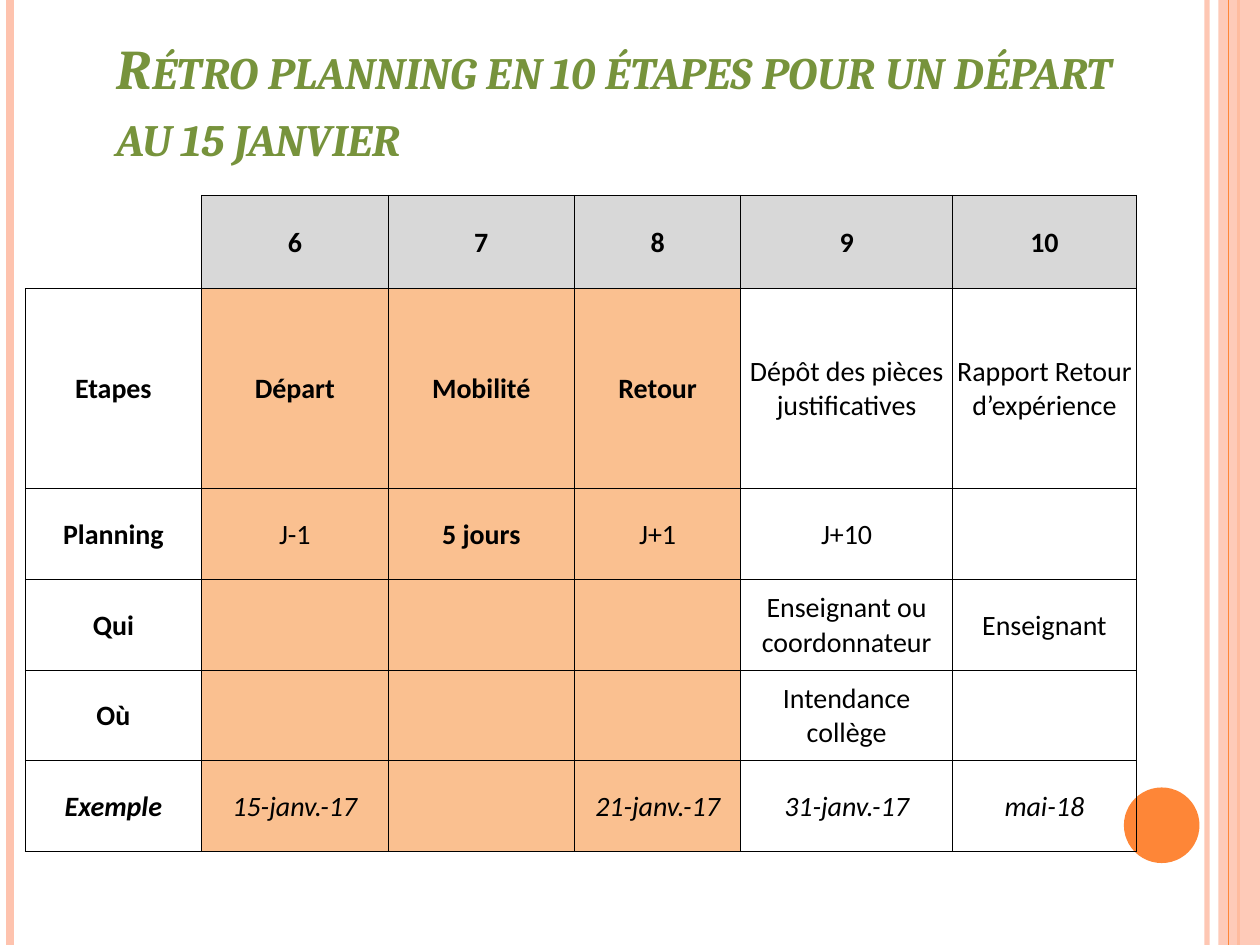
from lxml import etree
from pptx import Presentation
from pptx.dml.color import RGBColor
from pptx.enum import shapes, text
from pptx.oxml.ns import qn
from pptx.util import Inches, Pt

ORANGE, PEACH, APRICOT = "FE8637", "FEC3AE", "FAC090"
GREY, GREEN, BLACK = "D8D8D8", "77933C", "000000"

# x, colour, width in points, opacity in percent
STRIPES_BEHIND = [(9.58, PEACH, 3, 93), (0.08, PEACH, 4.5, 100), (9.83, ORANGE, 1.5, 100)]
STRIPE_IN_FRONT = (9.75, ORANGE, 0.75, 100)

COLUMN_WIDTHS = [1.4, 1.48, 1.48, 1.32, 1.68, 1.46]
ROW_HEIGHTS = [0.74, 1.59, 0.72, 0.72, 0.72, 0.72]
ROWS = [
    ["", "6", "7", "8", "9", "10"],
    ["Etapes", "Départ", "Mobilité", "Retour",
     "Dépôt des pièces justificatives", "Rapport Retour d’expérience"],
    ["Planning", "J-1", "5 jours", "J+1", "J+10", ""],
    ["Qui", "", "", "", "Enseignant ou\ncoordonnateur", "Enseignant"],
    ["Où", "", "", "", "Intendance collège", ""],
    ["Exemple", "15-janv.-17", "", "21-janv.-17", "31-janv.-17", "mai-18"],
]
TRIP_COLUMNS = (1, 2, 3)
BOLD_CELLS = {(1, 1), (1, 2), (1, 3), (2, 2)}


def rgb(value):
    return RGBColor.from_string(value)


def set_opacity(properties, percent):
    if percent < 100:
        color = properties.find(".//" + qn("a:srgbClr"))
        etree.SubElement(color, qn("a:alpha"), val=str(percent * 1000))


def add_stripe(slide, x, color, width, opacity):
    line = slide.shapes.add_connector(
        shapes.MSO_CONNECTOR.STRAIGHT, Inches(x), 0, Inches(x), Inches(7.5))
    line.line.color.rgb = rgb(color)
    line.line.width = Pt(width)
    properties = line._element.spPr
    set_opacity(properties, opacity)
    etree.SubElement(properties, qn("a:effectLst"))


def add_filled_shape(slide, kind, left, top, width, height, color, opacity=100):
    shape = slide.shapes.add_shape(
        kind, Inches(left), Inches(top), Inches(width), Inches(height))
    shape.shadow.inherit = False
    shape.fill.solid()
    shape.fill.fore_color.rgb = rgb(color)
    shape.line.fill.background()
    set_opacity(shape._element.spPr, opacity)


def write(frame, content, font="Calibri", size=16, color=BLACK, bold=False,
          italic=False, small_caps=False, align=text.PP_ALIGN.LEFT):
    paragraph = frame.paragraphs[0]
    paragraph.text = content
    paragraph.alignment = align
    for run in paragraph.runs:
        run.font.name = font
        run.font.size = Pt(size)
        run.font.color.rgb = rgb(color)
        run.font.bold = bold
        run.font.italic = italic
        if small_caps:
            run.font._element.set("cap", "small")


def set_borders(cell, hidden=()):
    properties = cell._tc.get_or_add_tcPr()
    for side in ("lnL", "lnR", "lnT", "lnB"):
        border = etree.SubElement(properties, qn("a:" + side), w=str(Pt(0.5)))
        if side in hidden:
            etree.SubElement(border, qn("a:noFill"))
        else:
            fill = etree.SubElement(border, qn("a:solidFill"))
            etree.SubElement(fill, qn("a:srgbClr"), val=BLACK)


def fill_cell(cell, color):
    if color:
        cell.fill.solid()
        cell.fill.fore_color.rgb = rgb(color)
    else:
        cell.fill.background()


def cell_color(row, column):
    if row == 0:
        return GREY if column else None
    return APRICOT if column in TRIP_COLUMNS else None


def add_planning_table(slide):
    table = slide.shapes.add_table(
        len(ROWS), len(COLUMN_WIDTHS), Inches(0.2), Inches(1.55),
        Inches(sum(COLUMN_WIDTHS)), Inches(sum(ROW_HEIGHTS))).table
    table.first_row = table.horz_banding = False
    for column, width in zip(table.columns, COLUMN_WIDTHS):
        column.width = Inches(width)
    for row, height in zip(table.rows, ROW_HEIGHTS):
        row.height = Inches(height)
    for r, values in enumerate(ROWS):
        for c, value in enumerate(values):
            cell = table.cell(r, c)
            cell.margin_left = cell.margin_right = cell.margin_top = Inches(0.01)
            cell.margin_bottom = 0
            cell.vertical_anchor = text.MSO_ANCHOR.MIDDLE
            set_borders(cell, hidden=("lnL", "lnT") if r == c == 0 else ())
            fill_cell(cell, cell_color(r, c))
            write(cell.text_frame, value, align=text.PP_ALIGN.CENTER,
                  bold=r == 0 or c == 0 or (r, c) in BOLD_CELLS,
                  italic=r == len(ROWS) - 1)


def add_title(slide):
    box = slide.shapes.add_textbox(Inches(0.83), Inches(0.13), Inches(8.17), Inches(1.25))
    frame = box.text_frame
    frame.word_wrap = True
    frame.vertical_anchor = text.MSO_ANCHOR.BOTTOM
    write(frame, "Rétro planning en 10 étapes pour un départ au 15 janvier",
          font="Cambria", size=32, color=GREEN, bold=True, italic=True, small_caps=True)


def main():
    presentation = Presentation()
    presentation.slide_width, presentation.slide_height = Inches(10), Inches(7.5)
    slide = presentation.slides.add_slide(presentation.slide_layouts[6])
    for stripe in STRIPES_BEHIND:
        add_stripe(slide, *stripe)
    add_filled_shape(slide, shapes.MSO_SHAPE.RECTANGLE, 9.67, 0, 0.33, 7.5, PEACH, opacity=87)
    add_stripe(slide, *STRIPE_IN_FRONT)
    add_filled_shape(slide, shapes.MSO_SHAPE.OVAL, 8.92, 6.25, 0.6, 0.6, ORANGE)
    add_planning_table(slide)
    add_title(slide)
    presentation.save("out.pptx")


if __name__ == "__main__":
    main()
